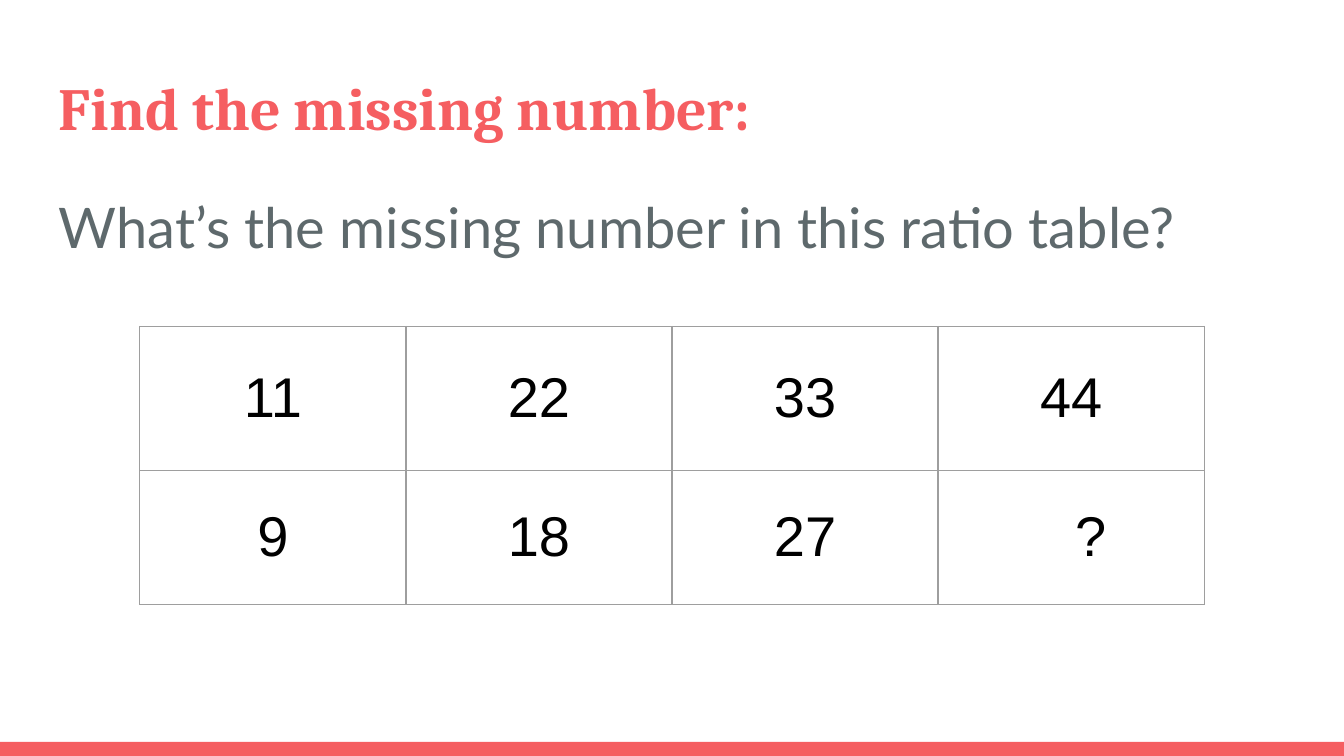
from dataclasses import dataclass

from lxml import etree
from pptx import Presentation
from pptx.dml.color import RGBColor
from pptx.enum import shapes, text
from pptx.oxml import ns
from pptx.util import Inches, Pt

CORAL = RGBColor(0xF5, 0x5E, 0x61)
SLATE = RGBColor(0x5E, 0x69, 0x6C)
BLACK = RGBColor(0, 0, 0)
GRID_GRAY = RGBColor(0x9E, 0x9E, 0x9E)
PADDING = Inches(0.1)


@dataclass(frozen=True)
class Heading:
    words: str
    top: float
    height: float
    style: dict


HEADINGS = [
    Heading("Find the missing number:", 0.43, 0.68,
            dict(font="Cambria", size=32, color=CORAL, bold=True)),
    Heading("What’s the missing number in this ratio table?", 1.26, 3.74,
            dict(font="Lato", size=30, color=SLATE, line_spacing=1.15, space_after=16)),
]
RATIOS = [["11", "22", "33", "44"], ["9", "18", "27", "?"]]
ROW_HEIGHTS = [1.07, 1]
COLUMN_WIDTH = 1.98
UNKNOWN_INDENT = 1.02


def write(frame, words: str, *, font: str, size: float, color: RGBColor,
          bold: bool = False, align=text.PP_ALIGN.LEFT,
          line_spacing: float = 1.0, space_after: float = 0) -> None:
    paragraph = frame.paragraphs[0]
    paragraph.alignment = align
    paragraph.line_spacing = line_spacing
    paragraph.space_after = Pt(space_after)
    run = paragraph.add_run()
    run.text = words
    run.font.name = font
    run.font.size = Pt(size)
    run.font.bold = bold
    run.font.color.rgb = color


def draw_heading(slide, heading: Heading) -> None:
    box = slide.shapes.add_textbox(Inches(0.34), Inches(heading.top),
                                   Inches(9.32), Inches(heading.height))
    frame = box.text_frame
    frame.word_wrap = True
    frame.margin_left = frame.margin_right = PADDING
    frame.margin_top = frame.margin_bottom = PADDING
    write(frame, heading.words, **heading.style)


def outline_cell(cell) -> None:
    properties = cell._tc.get_or_add_tcPr()
    for position, side in enumerate(("lnL", "lnR", "lnT", "lnB")):
        line = etree.Element(ns.qn(f"a:{side}"), w=str(Pt(0.75)))
        fill = etree.SubElement(line, ns.qn("a:solidFill"))
        etree.SubElement(fill, ns.qn("a:srgbClr"), val=str(GRID_GRAY))
        properties.insert(position, line)


def draw_ratio_table(slide) -> None:
    columns = len(RATIOS[0])
    table = slide.shapes.add_table(
        len(RATIOS), columns, Inches(1.04), Inches(2.43),
        Inches(COLUMN_WIDTH * columns), Inches(sum(ROW_HEIGHTS))).table
    table.first_row = table.horz_banding = False
    for column in table.columns:
        column.width = Inches(COLUMN_WIDTH)
    for row, height, values in zip(table.rows, ROW_HEIGHTS, RATIOS):
        row.height = Inches(height)
        for cell, value in zip(row.cells, values):
            unknown = value == "?"
            cell.fill.background()
            cell.vertical_anchor = text.MSO_ANCHOR.MIDDLE
            cell.margin_left = Inches(UNKNOWN_INDENT) if unknown else PADDING
            cell.margin_right = cell.margin_top = cell.margin_bottom = PADDING
            write(cell.text_frame, value, font="Arial", size=30, color=BLACK,
                  align=text.PP_ALIGN.LEFT if unknown else text.PP_ALIGN.CENTER)
            outline_cell(cell)


def main() -> None:
    deck = Presentation()
    # Widescreen 16:9
    deck.slide_width = Inches(10)
    deck.slide_height = deck.slide_width * 9 // 16
    slide = deck.slides.add_slide(deck.slide_layouts[6])

    # Footer band, down to the slide edge
    band_top = Inches(5.52)
    band = slide.shapes.add_shape(shapes.MSO_SHAPE.RECTANGLE, Inches(0), band_top,
                                  deck.slide_width, deck.slide_height - band_top)
    band.shadow.inherit = False
    band.fill.solid()
    band.fill.fore_color.rgb = CORAL
    band.line.fill.background()

    # Title and question
    for heading in HEADINGS:
        draw_heading(slide, heading)

    # Ratio table
    draw_ratio_table(slide)
    deck.save("out.pptx")


if __name__ == "__main__":
    main()
